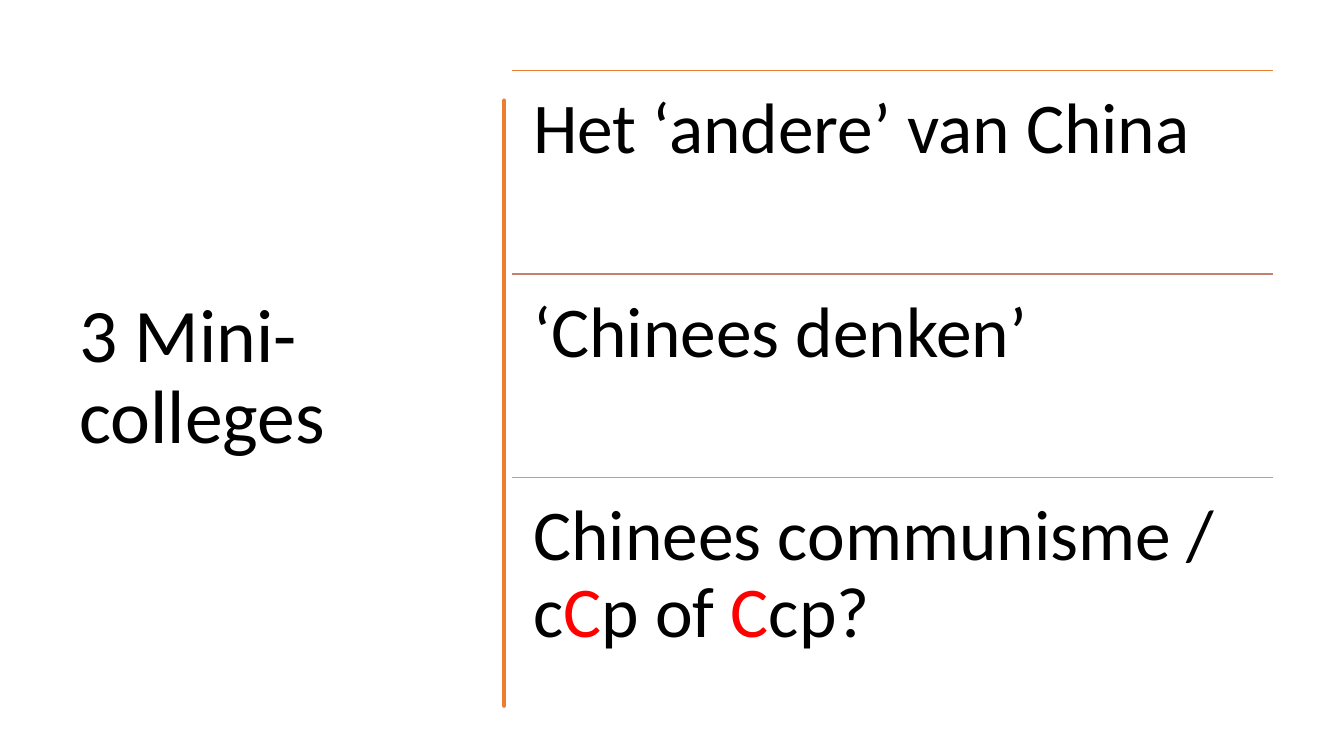
from lxml import etree
from pptx import Presentation
from pptx import util as u
from pptx.dml.color import RGBColor
from pptx.enum import shapes, text
from pptx.oxml.ns import qn

SLIDE_W, SLIDE_H = 13.33, 7.5
TOP = 0.7
TITLE_LEFT, TITLE_W, TITLE_H = 0.69, 3.74, 6.11
LIST_LEFT, LIST_W, ROW_H = 5.08, 7.55, 2.02
FONT = "Calibri"
COLORS = {"text": "000000", "accent": "FF0000", "orange": "ED7D31",
          "rust": "C48170", "grey": "A5A5A5"}

# Each lecture: rule colour and its pieces of text with their colours
LECTURES = [
    ("orange", [("Het ‘andere’ van China", "text")]),
    ("rust", [("‘Chinees denken’", "text")]),
    ("grey", [("Chinees communisme / c", "text"), ("C", "accent"),
              ("p of ", "text"), ("C", "accent"), ("cp?", "text")]),
]

# Hand-drawn divider: down the right edge, then up the left edge
DIVIDER = [
    (4.75, 0.84), (4.76, 1.15), (4.75, 1.46), (4.74, 1.8), (4.75, 2.26),
    (4.75, 2.94), (4.75, 3.56), (4.76, 3.95), (4.75, 4.36), (4.74, 4.7),
    (4.75, 5.1), (4.76, 5.45), (4.75, 5.84), (4.75, 6.76),
    (4.73, 6.76), (4.72, 6.4), (4.73, 6.13), (4.73, 5.57), (4.72, 5.2),
    (4.73, 4.77), (4.72, 4.45), (4.73, 4.15), (4.73, 3.35), (4.72, 2.9),
    (4.73, 2.5), (4.74, 2.1), (4.73, 1.81), (4.74, 1.35), (4.73, 0.84),
]


def rgb(name):
    return RGBColor.from_string(COLORS[name])


def add_text(slide, box, pieces, size, inset=(0.1, 0.05),
             anchor=text.MSO_ANCHOR.TOP):
    """Add one paragraph built from (words, colour) pieces."""
    frame = slide.shapes.add_textbox(*map(u.Inches, box)).text_frame
    frame.word_wrap = True
    frame.vertical_anchor = anchor
    frame.margin_left = frame.margin_right = u.Inches(inset[0])
    frame.margin_top = frame.margin_bottom = u.Inches(inset[1])
    paragraph = frame.paragraphs[0]
    paragraph.line_spacing = 0.9
    paragraph.font.name = FONT
    paragraph.font.size = u.Pt(size)
    for words, color in pieces:
        run = paragraph.add_run()
        run.text = words
        run.font.color.rgb = rgb(color)


def add_rule(slide, y, color):
    left, right, height = map(u.Inches, (LIST_LEFT, LIST_LEFT + LIST_W, y))
    rule = slide.shapes.add_connector(
        shapes.MSO_CONNECTOR.STRAIGHT, left, height, right, height)
    rule.line.color.rgb = rgb(color)
    rule.line.width = u.Pt(1)
    etree.SubElement(rule._element.spPr, qn("a:effectLst"))


def add_divider(slide):
    builder = slide.shapes.build_freeform(*DIVIDER[0], scale=u.Inches(1))
    builder.add_line_segments(DIVIDER[1:], close=True)
    divider = builder.convert_to_shape()
    divider.shadow.inherit = False
    divider.fill.solid()
    divider.fill.fore_color.rgb = rgb("orange")
    divider.line.color.rgb = rgb("orange")
    divider.line.width = u.Pt(3.25)
    etree.SubElement(divider.line._get_or_add_ln(), qn("a:round"))


def main():
    deck = Presentation()
    deck.slide_width, deck.slide_height = u.Inches(SLIDE_W), u.Inches(SLIDE_H)
    slide = deck.slides.add_slide(deck.slide_layouts[6])
    add_text(slide, (TITLE_LEFT, TOP, TITLE_W, TITLE_H),
             [("3 Mini-colleges", "text")], 54, anchor=text.MSO_ANCHOR.MIDDLE)
    add_divider(slide)
    for row, (color, pieces) in enumerate(LECTURES):
        y = TOP + row * ROW_H
        add_rule(slide, y, color)
        add_text(slide, (LIST_LEFT, y, LIST_W, ROW_H), pieces, 51,
                 inset=(0.21, 0.21))
    deck.save("out.pptx")


if __name__ == "__main__":
    main()
